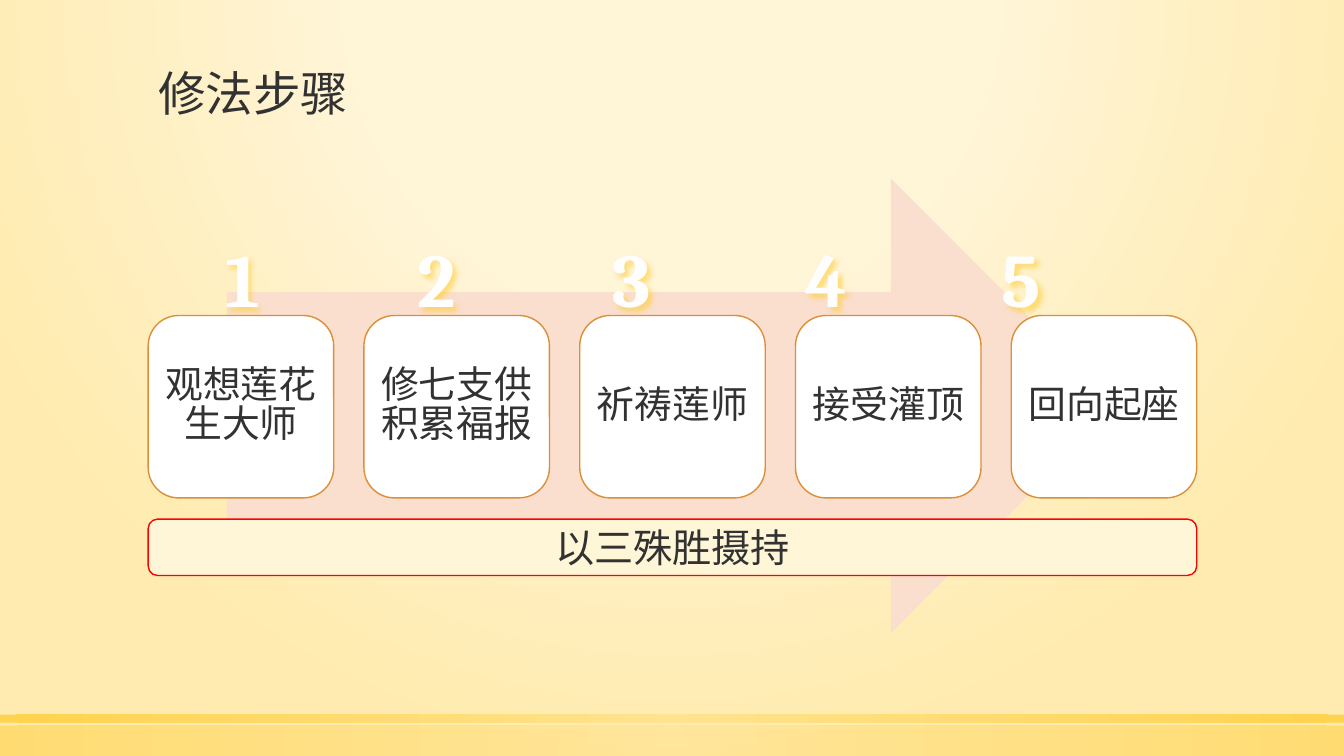
from dataclasses import dataclass

from lxml import etree
from pptx import Presentation
from pptx.dml.color import RGBColor as RGB
from pptx.enum.shapes import MSO_SHAPE as SHAPE
from pptx.enum.text import MSO_ANCHOR as ANCHOR, MSO_AUTO_SIZE as AUTOSIZE, PP_ALIGN as ALIGN
from pptx.oxml import parse_xml
from pptx.oxml.ns import nsdecls, qn
from pptx.util import Inches, Pt


@dataclass(frozen=True)
class Theme:
    font: str = "Noto Sans CJK SC"
    number_font: str = "Cambria"
    ink: str = "323232"
    number: str = "FEFEFE"
    gold: str = "FFCD36"
    pale_gold: str = "FFE186"
    cream: str = "FFF5D7"
    sand: str = "FFEBAF"
    arrow: str = "FADFCE"
    white: str = "FFFFFF"
    card_line: str = "DC8F38"
    red: str = "FF0000"
    title_size: float = 34
    step_size: float = 27
    basis_size: float = 28
    number_size: float = 54


@dataclass(frozen=True)
class Box:
    left: float
    top: float
    width: float
    height: float

    def lengths(self) -> tuple:
        return tuple(Inches(v) for v in (self.left, self.top, self.width, self.height))


@dataclass(frozen=True)
class Stop:
    position: int
    color: str
    alpha: int = 100


THEME = Theme()
WIDTH, HEIGHT = 13.33, 7.5
LEFT, CONTENT_WIDTH = 1.47, 10.4
STEPS = ("观想莲花生大师", "修七支供积累福报", "祈祷莲师", "接受灌顶", "回向起座")
CARD_WIDTH, CARD_PITCH = 1.84, 2.14
FIRST_NUMBER, NUMBER_PITCH = 0.84, 1.93


def set_radial(grad, stops: list[Stop], top: int = 50, bottom: int = 50) -> None:
    """Turn a gradFill element into a radial gradient."""
    for child in list(grad):
        grad.remove(child)
    listed = etree.SubElement(grad, qn("a:gsLst"))
    for stop in stops:
        mark = etree.SubElement(listed, qn("a:gs"), pos=str(stop.position * 1000))
        color = etree.SubElement(mark, qn("a:srgbClr"), val=stop.color)
        etree.SubElement(color, qn("a:alpha"), val=str(stop.alpha * 1000))
    circle = etree.SubElement(grad, qn("a:path"), {"path": "circle"})
    etree.SubElement(circle, qn("a:fillToRect"), l="50000", t=str(top * 1000),
                     r="50000", b=str(bottom * 1000))


def add_block(slide, kind: SHAPE, box: Box, fill: str | None = None, line: str | None = None):
    block = slide.shapes.add_shape(kind, *box.lengths())
    block.shadow.inherit = False
    if fill:
        block.fill.solid()
        block.fill.fore_color.rgb = RGB.from_string(fill)
    if line:
        block.line.color.rgb = RGB.from_string(line)
        block.line.width = Pt(1)
    else:
        block.line.fill.background()
    return block


def write(shape, text: str, *, size: float, color: str = THEME.ink, font: str = THEME.font,
          bold: bool = False, align: ALIGN = ALIGN.CENTER, anchor: ANCHOR = ANCHOR.MIDDLE,
          spacing: float = 1.0, inset: float = 0.1):
    """Write one formatted paragraph and return its run."""
    frame = shape.text_frame
    frame.word_wrap = True
    frame.vertical_anchor = anchor
    frame.margin_left = frame.margin_right = Inches(inset)
    paragraph = frame.paragraphs[0]
    paragraph.alignment = align
    paragraph.line_spacing = spacing
    run = paragraph.add_run()
    run.text = text
    run.font.size = Pt(size)
    run.font.bold = bold
    run.font.name = font
    run.font.color.rgb = RGB.from_string(color)
    etree.SubElement(run.font._element, qn("a:ea"), typeface=font)
    return run


def add_numbers(slide) -> None:
    """Number row: centred tab stops, gold outline and soft shadow."""
    numbers = slide.shapes.add_textbox(*Box(LEFT, 2.25, CONTENT_WIDTH, 1.01).lengths())
    text = "".join(f"\t{n}" for n in range(1, len(STEPS) + 1))
    run = write(numbers, text, size=THEME.number_size, color=THEME.number,
                font=THEME.number_font, bold=True, align=ALIGN.LEFT, anchor=ANCHOR.TOP)
    numbers.text_frame.auto_size = AUTOSIZE.SHAPE_TO_FIT_TEXT
    run.font._element.set("spc", "50")
    run.font._element.insert(0, parse_xml(
        f'<a:ln {nsdecls("a")} w="9525"><a:solidFill><a:srgbClr val="{THEME.gold}"/>'
        '</a:solidFill></a:ln>'))
    tabs = etree.SubElement(numbers.text_frame.paragraphs[0]._p.get_or_add_pPr(), qn("a:tabLst"))
    for i in range(len(STEPS)):
        etree.SubElement(tabs, qn("a:tab"), algn="ctr",
                         pos=str(Inches(FIRST_NUMBER + i * NUMBER_PITCH)))
    numbers._element.spPr.append(parse_xml(
        f'<a:effectLst {nsdecls("a")}><a:outerShdw blurRad="38100" dist="38100" dir="2700000">'
        f'<a:srgbClr val="{THEME.gold}"><a:alpha val="60000"/></a:srgbClr>'
        '</a:outerShdw></a:effectLst>'))


def main() -> None:
    deck = Presentation()
    deck.slide_width, deck.slide_height = Inches(WIDTH), Inches(HEIGHT)
    slide = deck.slides.add_slide(deck.slide_layouts[6])

    # Background glow
    slide.background.fill.gradient()
    set_radial(slide.element.find(".//" + qn("a:gradFill")),
               [Stop(0, THEME.cream, 59), Stop(40, THEME.cream, 66), Stop(100, THEME.sand)],
               top=-80, bottom=180)

    # Footer bands
    for top, height, alpha in ((7.2, 0.3, 50), (7.09, 0.08, 80)):
        band = add_block(slide, SHAPE.RECTANGLE, Box(0, top, WIDTH, height))
        band.fill.gradient()
        set_radial(band._element.spPr.find(qn("a:gradFill")),
                   [Stop(0, THEME.pale_gold, alpha), Stop(100, THEME.gold, alpha)])

    # Title
    title = slide.shapes.add_textbox(*Box(LEFT, 0.51, CONTENT_WIDTH, 0.75).lengths())
    write(title, "修法步骤", size=THEME.title_size, align=ALIGN.LEFT,
          anchor=ANCHOR.BOTTOM, spacing=0.9)

    # Arrow with the five steps
    add_block(slide, SHAPE.RIGHT_ARROW, Box(2.25, 1.77, 8.84, 4.51), THEME.arrow)
    for i, step in enumerate(STEPS):
        card = add_block(slide, SHAPE.ROUNDED_RECTANGLE,
                         Box(LEFT + i * CARD_PITCH, 3.13, CARD_WIDTH, 1.81),
                         THEME.white, THEME.card_line)
        write(card, step, size=THEME.step_size, spacing=0.85, inset=0.02)
    add_numbers(slide)

    # Basis of all steps
    basis = add_block(slide, SHAPE.ROUNDED_RECTANGLE, Box(LEFT, 5.15, CONTENT_WIDTH, 0.56),
                      THEME.cream, THEME.red)
    write(basis, "以三殊胜摄持", size=THEME.basis_size)

    deck.save("out.pptx")


if __name__ == "__main__":
    main()
